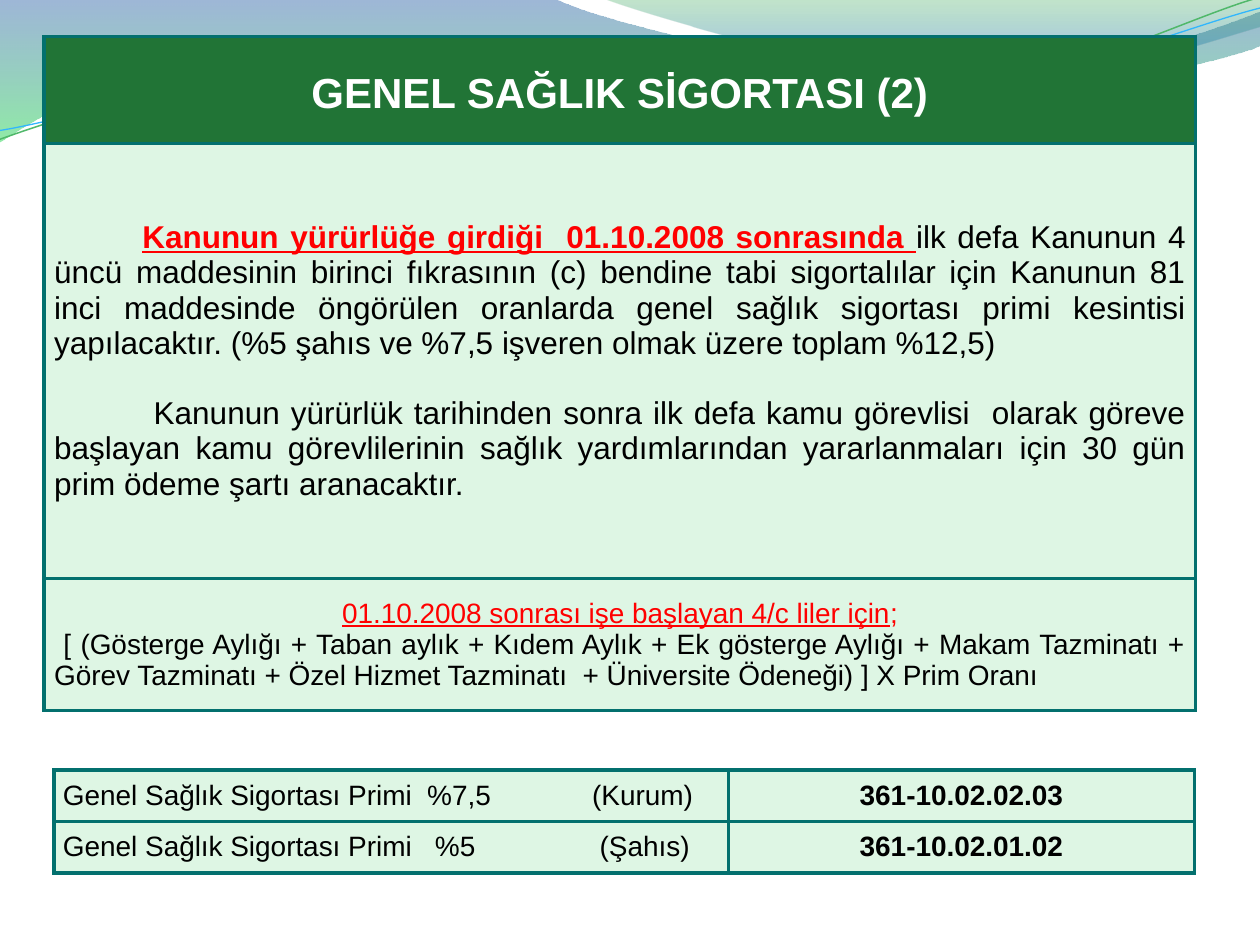
"""Build the general health insurance slide with its wave header and two tables."""
import lxml.etree
import pptx
import pptx.dml.color
import pptx.enum.text
import pptx.oxml.ns
import pptx.util

Inches = pptx.util.Inches
Pt = pptx.util.Pt
RGBColor = pptx.dml.color.RGBColor
ALIGN = pptx.enum.text.PP_ALIGN
qn = pptx.oxml.ns.qn

WHITE = RGBColor(0xFF, 0xFF, 0xFF)
BLACK = RGBColor(0, 0, 0)
RED = RGBColor(0xFF, 0, 0)
DARK_GREEN = RGBColor(0x21, 0x74, 0x36)
PALE_GREEN = RGBColor(0xDE, 0xF6, 0xE4)
TEAL = RGBColor(0x03, 0x70, 0x6E)
WAVE_BLUE = RGBColor(0x29, 0x60, 0xA7)
WAVE_GREEN = RGBColor(0x35, 0xDA, 0x5E)
CREST_GREEN = RGBColor(0x36, 0xA7, 0x52)
CREST_BLUE = RGBColor(0x24, 0x72, 0xD3)
LINE_GREEN = RGBColor(0x50, 0xB8, 0x6A)
LINE_BLUE = RGBColor(0x31, 0xB6, 0xFD)

WAVE = [(0, 0), (4.4, -0.01), (4.76, 0.17, 6.64, 0.63, 7.58, 0.63),
        (8.53, 0.63, 9.58, 0.26, 10, 0.09), (10.01, 0.36),
        (9.83, 0.44, 8.7, 0.76, 7.46, 0.75), (6.22, 0.75, 3.82, 0.28, 2.57, 0.34),
        (1.29, 0.36, 0.46, 0.83, -0.01, 1.13)]
CREST = [(4.79, -0.01), (5.09, 0.11, 6.82, 0.62, 7.69, 0.65),
         (8.56, 0.69, 9.61, 0.32, 10, 0.21), (10, 0)]
GREEN_CURVE = [(-0.02, 0.87), (0.47, 0.72, 1.58, 0.41, 2.78, 0.42),
               (3.96, 0.42, 5.91, 0.93, 7.12, 0.9), (8.32, 0.87, 9.4, 0.36, 10, 0.22)]
BLUE_CURVE = [(-0.02, 0.8), (0.46, 0.75, 1.64, 0.45, 2.83, 0.46),
              (4.03, 0.46, 5.96, 0.89, 7.16, 0.85), (8.35, 0.83, 9.42, 0.42, 10.02, 0.3)]


def add_outline(page, outline, close):
    """Draw an outline of lines and cubic curves given in inches and return its shape."""
    ends = [(Inches(segment[-2]), Inches(segment[-1])) for segment in outline]
    builder = page.shapes.build_freeform(*ends[0])
    builder.add_line_segments(ends[1:], close=close)
    shape = builder.convert_to_shape()
    shape.shadow.inherit = False
    lines = list(shape._element.spPr.iter(qn("a:lnTo")))
    for line, segment in zip(lines, outline[1:]):
        if len(segment) == 6:
            line.tag = qn("a:cubicBezTo")
            for index in (0, 1):
                x, y = segment[2 * index:2 * index + 2]
                control = lxml.etree.Element(qn("a:pt"), x=str(Inches(x) - shape.left),
                                             y=str(Inches(y) - shape.top))
                line.insert(index, control)
    return shape


def add_wave(page, outline, stops):
    """Draw a closed wave with a translucent gradient from top to bottom."""
    shape = add_outline(page, outline, True)
    shape.line.fill.background()
    shape.fill.gradient()
    shape.fill.gradient_angle = 270
    for stop, (position, color, _) in zip(shape.fill.gradient_stops, stops):
        stop.position = position
        stop.color.rgb = color
    for element, (_, _, opacity) in zip(shape._element.spPr.iter(qn("a:srgbClr")), stops):
        lxml.etree.SubElement(element, qn("a:alpha"), val=str(opacity * 1000))


def add_curve(page, outline, color, width):
    """Draw an open, slightly turned curved line."""
    shape = add_outline(page, outline, False)
    shape.rotation = 357.3
    shape.fill.background()
    shape.line.color.rgb = color
    shape.line.width = Pt(width)


def add_span(para, text, size=16, color=BLACK, bold=False, underline=False):
    """Add formatted text to a paragraph."""
    span = para.add_run()
    span.text = text
    font = span.font
    font.name, font.size, font.bold, font.underline = "Arial", Pt(size), bold, underline
    font.color.rgb = color


def format_para(para, align, indent=0, before=0, spacing=1.0, tab=None):
    """Set alignment, first-line indent, spacing and tab stop, and return the paragraph."""
    para.alignment = align
    para.space_before = Pt(before)
    para.line_spacing = spacing
    properties = para._p.get_or_add_pPr()
    if indent:
        properties.set("marL", "0")
        properties.set("indent", str(Inches(indent)))
    if tab:
        tabs = lxml.etree.SubElement(properties, qn("a:tabLst"))
        lxml.etree.SubElement(tabs, qn("a:tab"), pos=str(Inches(tab)), algn="l")
    return para


def add_border(cell):
    """Give a cell teal lines on all four sides."""
    properties = cell._tc.get_or_add_tcPr()
    for index, side in enumerate(("a:lnL", "a:lnR", "a:lnT", "a:lnB")):
        line = lxml.etree.Element(qn(side), w=str(Pt(2.25)))
        fill = lxml.etree.SubElement(line, qn("a:solidFill"))
        lxml.etree.SubElement(fill, qn("a:srgbClr"), val=str(TEAL))
        properties.insert(index, line)


def add_grid(page, left, top, widths, heights, side_margin, end_margin):
    """Add a bordered pale green table."""
    frame = page.shapes.add_table(len(heights), len(widths), Inches(left), Inches(top),
                                  Inches(sum(widths)), Inches(sum(heights)))
    table = frame.table
    table.first_row = table.horz_banding = False
    for column, width in zip(table.columns, widths):
        column.width = Inches(width)
    for row, height in zip(table.rows, heights):
        row.height = Inches(height)
    for cell in table.iter_cells():
        cell.fill.solid()
        cell.fill.fore_color.rgb = PALE_GREEN
        cell.vertical_anchor = pptx.enum.text.MSO_ANCHOR.MIDDLE
        cell.margin_left = cell.margin_right = Inches(side_margin)
        cell.margin_top = cell.margin_bottom = Inches(end_margin)
        add_border(cell)
    return table


def add_rules(page):
    """Add the table with the title, the rules and the formula."""
    table = add_grid(page, 0.35, 0.29, [9.14], [0.85, 3.45, 1.05], 0.08, 0.01)
    title, rules, formula = (table.cell(row, 0) for row in range(3))
    title.fill.fore_color.rgb = DARK_GREEN
    para = format_para(title.text_frame.paragraphs[0], ALIGN.CENTER, spacing=1.15)
    add_span(para, "GENEL SAĞLIK SİGORTASI (2)", size=24, color=WHITE, bold=True)

    para = format_para(rules.text_frame.paragraphs[0], ALIGN.JUSTIFY, indent=0.7)
    add_span(para, "Kanunun yürürlüğe girdiği  01.10.2008 sonrasında ",
             size=18, color=RED, bold=True, underline=True)
    add_span(para, "ilk defa Kanunun 4 üncü maddesinin birinci fıkrasının (c) bendine tabi "
             "sigortalılar için Kanunun 81 inci maddesinde öngörülen oranlarda genel sağlık "
             "sigortası primi kesintisi yapılacaktır. (%5 şahıs ve %7,5 işveren olmak üzere "
             "toplam %12,5)", size=18)
    para = format_para(rules.text_frame.add_paragraph(), ALIGN.JUSTIFY, indent=0.79, before=20)
    add_span(para, "Kanunun yürürlük tarihinden sonra ilk defa kamu görevlisi  olarak göreve "
             "başlayan kamu görevlilerinin sağlık yardımlarından yararlanmaları için 30 gün "
             "prim ödeme şartı aranacaktır.", size=18)

    para = format_para(formula.text_frame.paragraphs[0], ALIGN.CENTER)
    add_span(para, "01.10.2008 sonrası işe başlayan 4/c liler için", color=RED, underline=True)
    add_span(para, ";", color=RED)
    para = format_para(formula.text_frame.add_paragraph(), ALIGN.JUSTIFY)
    add_span(para, " [ (Gösterge Aylığı + Taban aylık + Kıdem Aylık + Ek gösterge Aylığı + "
             "Makam Tazminatı + Görev Tazminatı + Özel Hizmet Tazminatı  + Üniversite "
             "Ödeneği) ] X Prim Oranı")


def add_codes(page):
    """Add the table of premium shares and their account codes."""
    table = add_grid(page, 0.43, 6.11, [5.35, 3.7], [0.41, 0.41], 0.07, 0)
    entries = [("Genel Sağlık Sigortası Primi  %7,5\t(Kurum)", 4.2, "361-10.02.02.03"),
               ("Genel Sağlık Sigortası Primi   %5\t(Şahıs)", 4.26, "361-10.02.01.02")]
    for row, (premium, tab, code) in enumerate(entries):
        para = table.cell(row, 0).text_frame.paragraphs[0]
        add_span(format_para(para, ALIGN.LEFT, tab=tab), premium)
        para = table.cell(row, 1).text_frame.paragraphs[0]
        add_span(format_para(para, ALIGN.CENTER), code, bold=True)


def main():
    """Build and save the deck."""
    deck = pptx.Presentation()
    deck.slide_width, deck.slide_height = Inches(10), Inches(7.5)
    page = deck.slides.add_slide(deck.slide_layouts[6])
    add_wave(page, WAVE, [(0, WAVE_BLUE, 45), (1, WAVE_GREEN, 55)])
    add_wave(page, CREST, [(0, CREST_GREEN, 30), (0.8, CREST_BLUE, 45)])
    add_curve(page, GREEN_CURVE, LINE_GREEN, 0.85)
    add_curve(page, BLUE_CURVE, LINE_BLUE, 0.75)
    add_rules(page)
    add_codes(page)
    deck.save("out.pptx")


if __name__ == "__main__":
    main()
